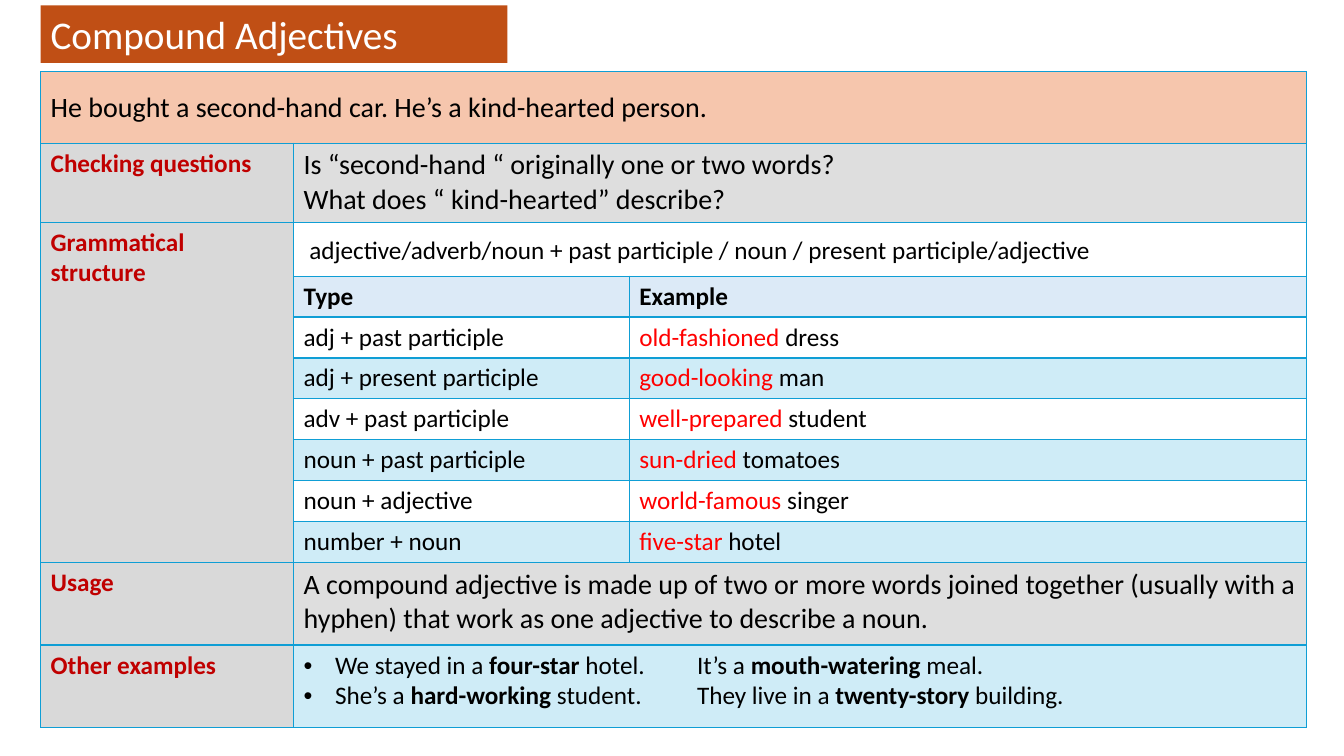
from pptx import Presentation
from pptx.dml.color import RGBColor
from pptx.enum.text import MSO_ANCHOR, MSO_AUTO_SIZE, PP_ALIGN
from pptx.oxml import parse_xml
from pptx.oxml.ns import nsdecls
from pptx.util import Pt

MIDDLE, TOP = MSO_ANCHOR.MIDDLE, MSO_ANCHOR.TOP
LEFT = PP_ALIGN.LEFT
NO_AUTOFIT = MSO_AUTO_SIZE.NONE

BLACK = RGBColor(0x00, 0x00, 0x00)
WHITE = RGBColor(0xFF, 0xFF, 0xFF)
RED = RGBColor(0xFF, 0x00, 0x00)
LABEL_RED = RGBColor(0xC0, 0x00, 0x00)
TITLE_ORANGE = RGBColor(0xC0, 0x4F, 0x15)
PEACH = RGBColor(0xF6, 0xC6, 0xAD)
LABEL_GREY = RGBColor(0xD9, 0xD9, 0xD9)
TEXT_GREY = RGBColor(0xDE, 0xDE, 0xDE)
HEADER_BLUE = RGBColor(0xDC, 0xEA, 0xF7)
PALE_BLUE = RGBColor(0xCF, 0xEC, 0xF7)
BORDER_BLUE = RGBColor(0x0F, 0x9E, 0xD5)

COLUMN_WIDTHS = [180.7, 239.8, 483.8]
ROW_HEIGHTS = [51, 56.4, 38.6] + [29.2] * 7 + [59.1] * 2
LABELS = {1: "Checking questions", 2: "Grammatical structure",
          10: "Usage", 11: "Other examples"}
QUESTIONS = ["Is “second-hand “ originally one or two words?",
             "What does “ kind-hearted” describe?"]
TYPES = [
    ("adj + past participle", "old-fashioned", "dress"),
    ("adj + present participle", "good-looking", "man"),
    ("adv + past participle", "well-prepared", "student"),
    ("noun + past participle", "sun-dried", "tomatoes"),
    ("noun + adjective", "world-famous", "singer"),
    ("number + noun", "five-star", "hotel"),
]
# Every second piece of an example line is bold.
OTHER_EXAMPLES = [
    ["We stayed in a ", "four-star", " hotel.\tIt’s a ", "mouth-watering", " meal."],
    ["She’s a ", "hard-working", " student.\tThey live in a ", "twenty-story", " building."],
]


def write(paragraph, text, size=18, color=BLACK, bold=False):
    run = paragraph.add_run()
    run.text = text
    run.font.name = "Calibri"
    run.font.size = Pt(size)
    run.font.color.rgb = color
    run.font.bold = bold


def style_cell(cell, fill):
    """Fill the cell and draw its four borders."""
    cell.fill.solid()
    cell.fill.fore_color.rgb = fill
    properties = cell._tc.get_or_add_tcPr()
    for position, side in enumerate("LRTB"):
        properties.insert(position, parse_xml(
            f'<a:ln{side} {nsdecls("a")} w="{Pt(1)}"><a:solidFill>'
            f'<a:srgbClr val="{BORDER_BLUE}"/></a:solidFill></a:ln{side}>'))


presentation = Presentation()
presentation.slide_width = Pt(960)
presentation.slide_height = Pt(540)
slide = presentation.slides.add_slide(presentation.slide_layouts[5])

# Title
title = slide.shapes.title
title.left, title.top, title.width, title.height = Pt(29), Pt(3.8), Pt(333.4), Pt(41.2)
title.fill.solid()
title.fill.fore_color.rgb = TITLE_ORANGE
title.text_frame.auto_size = NO_AUTOFIT
title.text_frame.vertical_anchor = MIDDLE
heading = title.text_frame.paragraphs[0]
heading.alignment = LEFT
write(heading, "Compound Adjectives", size=28, color=WHITE)

# Grid
lesson = slide.shapes.add_table(
    len(ROW_HEIGHTS), len(COLUMN_WIDTHS), Pt(29), Pt(51.3),
    Pt(sum(COLUMN_WIDTHS)), Pt(sum(ROW_HEIGHTS))).table
lesson.first_row = False
lesson.horz_banding = False
for column, width in zip(lesson.columns, COLUMN_WIDTHS):
    column.width = Pt(width)
for row, height in zip(lesson.rows, ROW_HEIGHTS):
    row.height = Pt(height)

content_fills = ([PEACH, TEXT_GREY, WHITE, HEADER_BLUE]
                 + [WHITE, PALE_BLUE] * 3 + [TEXT_GREY, PALE_BLUE])
for row_index, content_fill in enumerate(content_fills):
    label_fill = LABEL_GREY if row_index else PEACH
    for column_index, fill in enumerate([label_fill, content_fill, content_fill]):
        style_cell(lesson.cell(row_index, column_index), fill)

lesson.cell(0, 0).merge(lesson.cell(0, 2))
lesson.cell(2, 0).merge(lesson.cell(9, 0))
for row_index in (1, 2, 10, 11):
    lesson.cell(row_index, 1).merge(lesson.cell(row_index, 2))

# Opening sentence and row labels
opening = lesson.cell(0, 0)
opening.vertical_anchor = MIDDLE
write(opening.text_frame.paragraphs[0],
      "He bought a second-hand car. He’s a kind-hearted person.", size=20)
for row_index, label in LABELS.items():
    write(lesson.cell(row_index, 0).text_frame.paragraphs[0], label,
          color=LABEL_RED, bold=True)

# Checking questions
questions = lesson.cell(1, 1).text_frame
questions.add_paragraph()
for paragraph, question in zip(questions.paragraphs, QUESTIONS):
    write(paragraph, question, size=20)

# Grammatical structure
formula = lesson.cell(2, 1)
formula.vertical_anchor = TOP
formula.margin_top = Pt(9.7)
write(formula.text_frame.paragraphs[0],
      " adjective/adverb/noun + past participle / noun / present participle/adjective")
for column_index, header in enumerate(["Type", "Example"], start=1):
    write(lesson.cell(3, column_index).text_frame.paragraphs[0], header, bold=True)
for row_index, (kind, compound, noun) in enumerate(TYPES, start=4):
    write(lesson.cell(row_index, 1).text_frame.paragraphs[0], kind)
    example = lesson.cell(row_index, 2).text_frame.paragraphs[0]
    write(example, compound + " ", color=RED)
    write(example, noun)

# Usage
write(lesson.cell(10, 1).text_frame.paragraphs[0],
      "A compound adjective is made up of two or more words joined together "
      "(usually with a hyphen) that work as one adjective to describe a noun.", size=20)

# Other examples
examples = lesson.cell(11, 1).text_frame
examples.add_paragraph()
for paragraph, pieces in zip(examples.paragraphs, OTHER_EXAMPLES):
    layout = paragraph._p.get_or_add_pPr()
    layout.set("marL", str(Pt(22.5)))
    layout.set("indent", str(Pt(-22.5)))
    for bullet_xml in (f'<a:buFont {nsdecls("a")} typeface="Arial"/>',
                       f'<a:buChar {nsdecls("a")} char="•"/>',
                       f'<a:tabLst {nsdecls("a")}><a:tab pos="{Pt(281)}" algn="l"/></a:tabLst>'):
        layout.append(parse_xml(bullet_xml))
    for position, piece in enumerate(pieces):
        write(paragraph, piece, bold=position % 2 == 1)

presentation.save("out.pptx")
